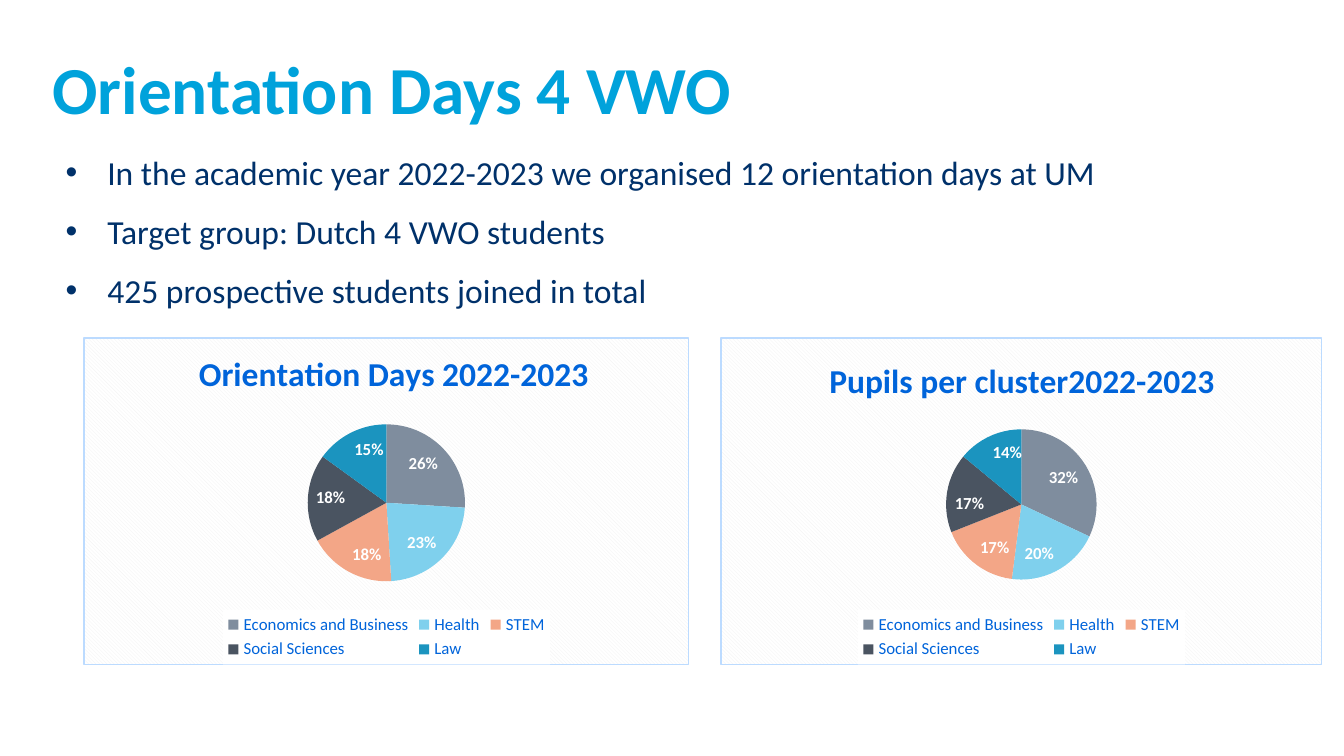
"""Build the Orientation Days slide with its bullets and two pie charts."""
from dataclasses import dataclass

import lxml.etree
import pptx
import pptx.chart.data
import pptx.dml.color
import pptx.enum.chart
import pptx.enum.text
import pptx.oxml
import pptx.oxml.ns
import pptx.util

Inches = pptx.util.Inches
Pt = pptx.util.Pt
qn = pptx.oxml.ns.qn

FONT = "Calibri"
NS = pptx.oxml.ns.nsdecls("a", "c")
CLUSTERS = ["Economics and Business", "Health", "STEM", "Social Sciences", "Law"]
COLORS = ["7F8D9E", "7FD0ED", "F3A687", "4A5461", "1B94BF"]
BULLETS = [
    "In the academic year 2022-2023 we organised 12 orientation days at UM",
    "Target group: Dutch 4 VWO students",
    "425 prospective students joined in total",
]


@dataclass
class Pie:
    title: str
    left: float
    width: float
    values: list[int]
    title_at: tuple[float, float]
    plot_at: tuple[float, float, float, float]


PIES = [
    Pie("Orientation Days 2022-2023", 0.62, 4.51, [26, 23, 18, 18, 15],
        (0.18, 0.02), (0.37, 0.26, 0.26, 0.49)),
    Pie("Pupils per cluster2022-2023", 5.36, 4.48, [32, 20, 17, 17, 14],
        (0.17, 0.04), (0.37, 0.28, 0.26, 0.46)),
]


def rgb(color: str) -> pptx.dml.color.RGBColor:
    return pptx.dml.color.RGBColor.from_string(color)


def style(font, size: float, color: str, bold: bool = False) -> None:
    font.name = FONT
    font.size = Pt(size)
    font.bold = bold
    font.color.rgb = rgb(color)


def layout_xml(place: tuple[float, ...], target: str = "") -> lxml.etree._Element:
    names = "xywh"[:len(place)]
    modes = "".join(f'<c:{n}Mode val="edge"/>' for n in names if n in "xy")
    sizes = "".join(f'<c:{n} val="{v}"/>' for n, v in zip(names, place))
    return pptx.oxml.parse_xml(
        f"<c:layout {NS}><c:manualLayout>{target}{modes}{sizes}"
        "</c:manualLayout></c:layout>")


def set_layout(parent: lxml.etree._Element, index: int, layout: lxml.etree._Element) -> None:
    for old in parent.findall(qn("c:layout")):
        parent.remove(old)
    parent.insert(index, layout)


def add_bullets(s, lines: list[str]) -> None:
    sp = s.shapes.add_textbox(Inches(0.39), Inches(1.08), Inches(9.38), Inches(1.73))
    tf = sp.text_frame
    tf.word_wrap = True
    for i, line in enumerate(lines):
        p = tf.paragraphs[0] if i == 0 else tf.add_paragraph()
        p.text = line
        p.space_after = Pt(10)
        pPr = p._p.get_or_add_pPr()
        pPr.set("marL", str(Inches(0.31)))
        pPr.set("indent", str(-Inches(0.31)))
        pPr.append(pptx.oxml.parse_xml(f'<a:buFont {NS} typeface="Arial"/>'))
        pPr.append(pptx.oxml.parse_xml(f'<a:buChar {NS} char="•"/>'))
        style(p.runs[0].font, 18, "00316A")


def add_pie(s, pie: Pie) -> None:
    data = pptx.chart.data.CategoryChartData()
    data.categories = CLUSTERS
    data.add_series("Series 1", pie.values)
    chart = s.shapes.add_chart(
        pptx.enum.chart.XL_CHART_TYPE.PIE, Inches(pie.left), Inches(2.51),
        Inches(pie.width), Inches(2.44), data).chart
    style(chart.font, 10, "001C3D")

    chart.has_title = True
    tf = chart.chart_title.text_frame
    tf.text = pie.title
    style(tf.paragraphs[0].runs[0].font, 18, "0064DA", True)
    set_layout(chart.chart_title._element, 1, layout_xml(pie.title_at))

    chart.has_legend = True
    legend = chart.legend
    legend.position = pptx.enum.chart.XL_LEGEND_POSITION.BOTTOM
    legend.include_in_layout = False
    style(legend.font, 9, "0064DA")
    legend._element.find(qn("c:overlay")).addnext(pptx.oxml.parse_xml(
        f'<c:spPr {NS}><a:solidFill><a:srgbClr val="FFFFFF"/></a:solidFill></c:spPr>'))

    plot = chart.plots[0]
    plot.vary_by_categories = True
    for i, color in enumerate(COLORS):
        fill = plot.series[0].points[i].format.fill
        fill.solid()
        fill.fore_color.rgb = rgb(color)
    plot.has_data_labels = True
    labels = plot.data_labels
    labels.show_percentage = True
    labels.show_value = False
    labels.number_format = "0%"
    labels.number_format_is_linked = False
    labels.position = pptx.enum.chart.XL_LABEL_POSITION.INSIDE_END
    style(labels.font, 9, "FFFFFF", True)

    root = chart._chartSpace
    area = root.find(qn("c:chart"))
    set_layout(area.find(qn("c:plotArea")), 0,
               layout_xml(pie.plot_at, '<c:layoutTarget val="inner"/>'))
    area.addnext(pptx.oxml.parse_xml(
        f'<c:spPr {NS}><a:pattFill prst="dkDnDiag">'
        '<a:fgClr><a:srgbClr val="F2F2F2"/></a:fgClr>'
        '<a:bgClr><a:srgbClr val="FFFFFF"/></a:bgClr></a:pattFill>'
        f'<a:ln w="{Pt(0.75)}"><a:solidFill><a:srgbClr val="BCDBFF"/></a:solidFill></a:ln>'
        '</c:spPr>'))


def add_title(s, text: str) -> None:
    sp = s.shapes.title
    sp.left, sp.top, sp.width, sp.height = map(Inches, (0.39, 0.34, 9.11, 0.62))
    tf = sp.text_frame
    tf.text = text
    tf.margin_left = tf.margin_right = tf.margin_top = tf.margin_bottom = 0
    tf.vertical_anchor = pptx.enum.text.MSO_ANCHOR.MIDDLE
    p = tf.paragraphs[0]
    p.alignment = pptx.enum.text.PP_ALIGN.LEFT
    style(p.runs[0].font, 36, "00A2DB", True)


def main() -> None:
    prs = pptx.Presentation()
    prs.slide_width = Inches(10)
    prs.slide_height = prs.slide_width * 9 // 16
    s = prs.slides.add_slide(prs.slide_layouts[5])
    add_title(s, "Orientation Days 4 VWO")
    add_bullets(s, BULLETS)
    for pie in PIES:
        add_pie(s, pie)
    prs.save("out.pptx")


if __name__ == "__main__":
    main()
